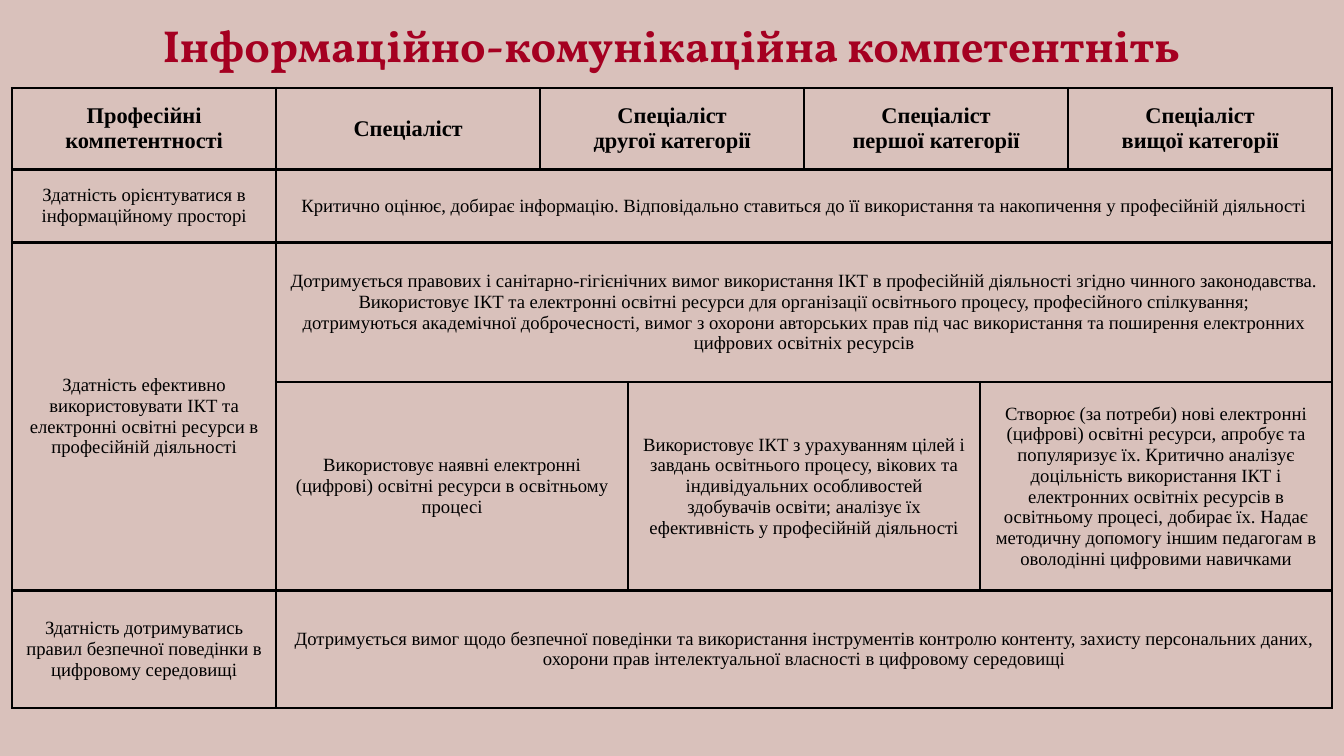
"""Build a slide with a table of digital competence by teacher category."""
from lxml import etree
from pptx import Presentation
from pptx import util as u
from pptx.dml.color import RGBColor
from pptx.enum import text
from pptx.oxml import ns


def paint(target, color):
    target.solid()
    target.fore_color.rgb = RGBColor.from_string(color)


def write(frame, content, color, **font):
    frame.text = content
    frame.word_wrap = True
    for para in frame.paragraphs:
        para.alignment = text.PP_ALIGN.CENTER
        for span in para.runs:
            for name, value in font.items():
                setattr(span.font, name, value)
            paint(span.font.fill, color)


INK = "000000"
SIDES = ("left", "top", "right", "bottom")
HEADER = {"name": "Times New Roman", "size": u.Pt(24), "bold": True}
BODY = {"name": "Times New Roman", "size": u.Pt(20), "bold": False}
TITLE = {"name": "Vollkorn", "size": u.Pt(48), "bold": True}

COLUMN_UNITS = [3, 3, 1, 2, 2, 1, 3]
ROW_HEIGHTS = [3.07, 2.77, 5.28, 7.87, 4.44]
TABLE_WIDTH = 49.89

# (row, column, row span, column span, wording)
CELLS = [
    (0, 0, 1, 1, "Професійні компетентності"),
    (0, 1, 1, 1, "Спеціаліст"),
    (0, 2, 1, 2, "Спеціаліст\nдругої категорії"),
    (0, 4, 1, 2, "Спеціаліст\nпершої категорії"),
    (0, 6, 1, 1, "Спеціаліст\nвищої категорії"),
    (1, 0, 1, 1, "Здатність орієнтуватися в інформаційному просторі"),
    (1, 1, 1, 6, "Критично оцінює, добирає інформацію. Відповідально ставиться до її "
                 "використання та накопичення у професійній діяльності"),
    (2, 0, 2, 1, "Здатність ефективно використовувати ІКТ та електронні освітні ресурси "
                 "в професійній діяльності"),
    (2, 1, 1, 6, "Дотримується правових і санітарно-гігієнічних вимог використання ІКТ "
                 "в професійній діяльності згідно чинного законодавства. Використовує ІКТ "
                 "та електронні освітні ресурси для організації освітнього процесу, "
                 "професійного спілкування;\n"
                 "дотримуються академічної доброчесності, вимог з охорони авторських прав "
                 "під час використання та поширення електронних цифрових освітніх ресурсів"),
    (3, 1, 1, 2, "Використовує наявні електронні (цифрові) освітні ресурси в освітньому "
                 "процесі"),
    (3, 3, 1, 2, "Використовує ІКТ з урахуванням цілей і завдань освітнього процесу, "
                 "вікових та індивідуальних особливостей здобувачів освіти; аналізує їх "
                 "ефективність у професійній діяльності"),
    (3, 5, 1, 2, "Створює (за потреби) нові електронні (цифрові) освітні ресурси, апробує "
                 "та популяризує їх. Критично аналізує доцільність використання ІКТ і "
                 "електронних освітніх ресурсів в освітньому процесі, добирає їх. Надає "
                 "методичну допомогу іншим педагогам в оволодінні цифровими навичками"),
    (4, 0, 1, 1, "Здатність дотримуватись правил безпечної поведінки в цифровому "
                 "середовищі"),
    (4, 1, 1, 6, "Дотримується вимог щодо безпечної поведінки та використання "
                 "інструментів контролю контенту, захисту персональних даних, охорони прав "
                 "інтелектуальної власності в цифровому середовищі"),
]

deck = Presentation()
deck.slide_width, deck.slide_height = u.Cm(50.8), u.Cm(28.58)
page = deck.slides.add_slide(deck.slide_layouts[6])
paint(page.background.fill, "D9C1BB")

frame = page.shapes.add_table(
    len(ROW_HEIGHTS), len(COLUMN_UNITS),
    u.Cm(0.46), u.Cm(3.33), u.Cm(TABLE_WIDTH), u.Cm(sum(ROW_HEIGHTS)))
table = frame.table
table.first_row = table.horz_banding = False
for column, units in zip(table.columns, COLUMN_UNITS):
    column.width = u.Cm(TABLE_WIDTH * units / sum(COLUMN_UNITS))
for row, height in zip(table.rows, ROW_HEIGHTS):
    row.height = u.Cm(height)

for cell in table.iter_cells():
    cell.fill.background()
    cell.vertical_anchor = text.MSO_ANCHOR.MIDDLE
    for side in SIDES:
        setattr(cell, f"margin_{side}", u.Cm(0.53))
    properties = cell._tc.get_or_add_tcPr()
    for position, edge in enumerate("LRTB"):
        border = etree.Element(ns.qn(f"a:ln{edge}"), w=str(u.Pt(3)))
        fill = etree.SubElement(border, ns.qn("a:solidFill"))
        etree.SubElement(fill, ns.qn("a:srgbClr"), val=INK)
        properties.insert(position, border)

for row, column, down, across, wording in CELLS:
    cell = table.cell(row, column)
    if down * across > 1:
        cell.merge(table.cell(row + down - 1, column + across - 1))
    write(cell.text_frame, wording, INK, **(BODY if row else HEADER))

box = page.shapes.add_textbox(u.Cm(2.84), u.Cm(0.46), u.Cm(45.09), u.Cm(2.26))
for side in SIDES:
    setattr(box.text_frame, f"margin_{side}", 0)
write(box.text_frame, "Інформаційно-комунікаційна компетентніть", "A50021", **TITLE)
box.text_frame.paragraphs[0].line_spacing = 1.1

deck.save("out.pptx")
